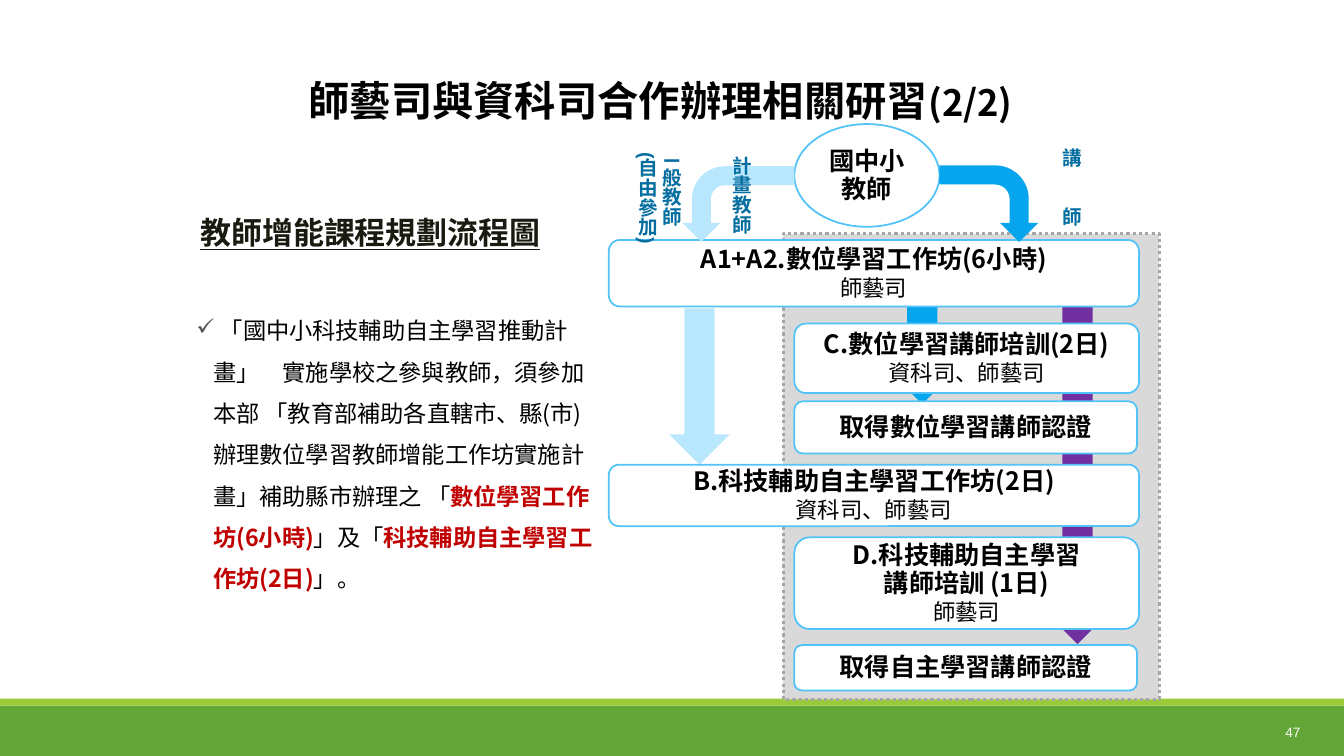
"""Build the slide on the teacher training workflow."""
from lxml import etree
from pptx import Presentation
from pptx.dml.color import RGBColor
from pptx.enum import dml, shapes, text
from pptx.oxml import ns
from pptx.util import Pt

COLOURS = {
    "white": "FFFFFF", "black": "000000", "green": "63A537", "lime": "99CB38",
    "panel": "D9D9D9", "panel_edge": "A6A6A6", "box_edge": "51C3F9",
    "blue": "08A5EF", "pale_blue": "B9E7FD", "purple": "7030A0",
    "label": "056EA0", "heading": "1B1A10", "tick": "595959", "red": "C00000",
}
CJK = "Noto Sans CJK SC"
KINDS = shapes.MSO_SHAPE


def draw(kind, bounds, fill, edge=None, width=1.25):
    """Add a filled preset shape at left, top, width, height in points."""
    shape = page.shapes.add_shape(kind, *map(Pt, bounds))
    shape.shadow.inherit = False
    shape.fill.solid()
    shape.fill.fore_color.rgb = RGBColor.from_string(COLOURS[fill])
    if edge:
        shape.line.color.rgb = RGBColor.from_string(COLOURS[edge])
        shape.line.width = Pt(width)
    else:
        shape.line.fill.background()
    return shape


def style(para, size, colour, bold=False, face=CJK, spacing=None):
    """Set the font and line spacing of a paragraph."""
    para.line_spacing = spacing
    para.font.size = Pt(size)
    para.font.bold = bold
    para.font.color.rgb = RGBColor.from_string(COLOURS[colour])
    para.font.name = face
    props = para._p.get_or_add_pPr().get_or_add_defRPr()
    etree.SubElement(props, ns.qn("a:ea")).set("typeface", CJK)


deck = Presentation()
deck.slide_width, deck.slide_height = Pt(960), Pt(540)
page = deck.slides.add_slide(deck.slide_layouts[5])

draw(KINDS.RECTANGLE, (0, 504, 960, 36), "green")
draw(KINDS.RECTANGLE, (0, 499, 960, 5), "lime")

number = page.shapes.add_textbox(Pt(833), Pt(508.3), Pt(103), Pt(28.8))
number.text_frame.vertical_anchor = text.MSO_ANCHOR.MIDDLE
number.text_frame.text = "47"
para = number.text_frame.paragraphs[0]
para.alignment = text.PP_ALIGN.RIGHT
style(para, 9.7, "white", face="Arial")

title = page.shapes.title
title.left, title.top, title.width, title.height = map(Pt, (213.1, 46.1, 614.2, 54.7))
title.text_frame.auto_size = text.MSO_AUTO_SIZE.NONE
title.text_frame.vertical_anchor = text.MSO_ANCHOR.MIDDLE
para = title.text_frame.paragraphs[0]
para.alignment = text.PP_ALIGN.LEFT
style(para, 29.5, "black", True, spacing=0.9)
for words, size in (("師藝司與資科司合作辦理相關研習", 29.5), ("(2/2)", 25.9)):
    span = para.add_run()
    span.text = words
    span.font.size = Pt(size)

heading = page.shapes.add_textbox(Pt(136.1), Pt(149.8), Pt(307.4), Pt(33.1))
heading.text_frame.word_wrap = True
heading.text_frame.vertical_anchor = text.MSO_ANCHOR.BOTTOM
heading.text_frame.text = "教師增能課程規劃流程圖"
para = heading.text_frame.paragraphs[0]
style(para, 22.1, "heading", True)
para.font.underline = True

body = page.shapes.add_textbox(Pt(133.2), Pt(213.1), Pt(301.7), Pt(219.6))
body.text_frame.word_wrap = True
para = body.text_frame.paragraphs[0]
style(para, 16.6, "black", spacing=Pt(29.5))
props = para._p.get_or_add_pPr()
props.set("marL", str(Pt(12)))
props.set("indent", str(-Pt(12)))
tick_colour = etree.Element(ns.qn("a:buClr"))
etree.SubElement(tick_colour, ns.qn("a:srgbClr")).set("val", COLOURS["tick"])
tick = etree.Element(ns.qn("a:buChar"))
tick.set("char", "✓")
defaults = props.get_or_add_defRPr()
defaults.addprevious(tick_colour)
defaults.addprevious(tick)
for words, strong in (
    (" 「國中小科技輔助自主學習推動計畫」　實施學校之參與教師，須參加本部 "
     "「教育部補助各直轄市、縣(市)辦理數位學習教師增能工作坊實施計畫」補助縣市辦理之 「", False),
    ("數位學習工作坊(6小時)", True),
    ("」及「", False),
    ("科技輔助自主學習工作坊(2日)", True),
    ("」。", False),
):
    span = para.add_run()
    span.text = words
    if strong:
        span.font.bold = True
        span.font.color.rgb = RGBColor.from_string(COLOURS["red"])

panel = draw(KINDS.RECTANGLE, (559.4, 167, 268.6, 332.6), "panel", "panel_edge", 2.25)
panel.line.dash_style = dml.MSO_LINE.ROUND_DOT
for left, top, height, colour in (
    (748.1, 216, 244.1, "purple"),
    (637.2, 218.9, 69.8, "blue"),
    (478.1, 220.3, 111.6, "pale_blue"),
):
    draw(KINDS.DOWN_ARROW, (left, top, 43.2, height), colour)

for kind, bounds, topics, office in (
    (KINDS.OVAL, (567.4, 88.6, 103.7, 73.4), ["國中小", "教師"], None),
    (KINDS.ROUNDED_RECTANGLE, (434.9, 171.4, 378.7, 47.5),
     ["A1+A2.數位學習工作坊(6小時)"], "師藝司"),
    (KINDS.ROUNDED_RECTANGLE, (434.9, 331.9, 378.7, 43.9),
     ["B.科技輔助自主學習工作坊(2日)"], "資科司、師藝司"),
    (KINDS.ROUNDED_RECTANGLE, (567.4, 231.1, 246.2, 49.7),
     ["C.數位學習講師培訓(2日)"], "資科司、師藝司"),
    (KINDS.ROUNDED_RECTANGLE, (567.4, 383.8, 246.2, 65.5),
     ["D.科技輔助自主學習", "講師培訓 (1日)"], "師藝司"),
    (KINDS.ROUNDED_RECTANGLE, (567.4, 460.8, 244.8, 32.4), ["取得自主學習講師認證"], None),
    (KINDS.ROUNDED_RECTANGLE, (567.4, 286.6, 244.8, 37.4), ["取得數位學習講師認證"], None),
):
    box = draw(kind, bounds, "white", "box_edge")
    box.text_frame.vertical_anchor = text.MSO_ANCHOR.MIDDLE
    box.text_frame.text = "\n".join(topics + ([office] if office else []))
    for para in box.text_frame.paragraphs:
        para.alignment = text.PP_ALIGN.CENTER
        is_topic = para.text in topics
        style(para, 18 if is_topic else 16, "black", is_topic, spacing=Pt(20))

to_right = draw(KINDS.BENT_ARROW, (679, 110.2, 54.7, 70.6), "blue")
to_right.rotation = 90
to_left = draw(KINDS.BENT_ARROW, (500.4, 105.8, 54, 79.9), "pale_blue")
to_left.rotation = 270
to_left.element.spPr.get_or_add_xfrm().set("flipH", "1")

for bounds, lines, gap in (
    ((442.8, 101.5, 49, 82.8), [["ㄧ般教師"], ["(自由參加)"]], 0),
    ((510.5, 104.4, 31.7, 82.8), [["計畫教師"]], 0),
    ((745.9, 98.6, 31.7, 72.7), [["講", "師"]], 28.6),
):
    label = page.shapes.add_textbox(*map(Pt, bounds))
    frame = label.text_frame
    frame.word_wrap = True
    frame.auto_size = text.MSO_AUTO_SIZE.SHAPE_TO_FIT_TEXT
    frame._txBody.bodyPr.set("vert", "eaVert")
    for index, words in enumerate(lines):
        para = frame.add_paragraph() if index else frame.paragraphs[0]
        style(para, 14, "label", True, "Arial", Pt(17))
        for word in words:
            para.add_run().text = word
        if gap:
            para.runs[0]._r.get_or_add_rPr().set("spc", str(round(gap * 100)))

deck.save("out.pptx")
